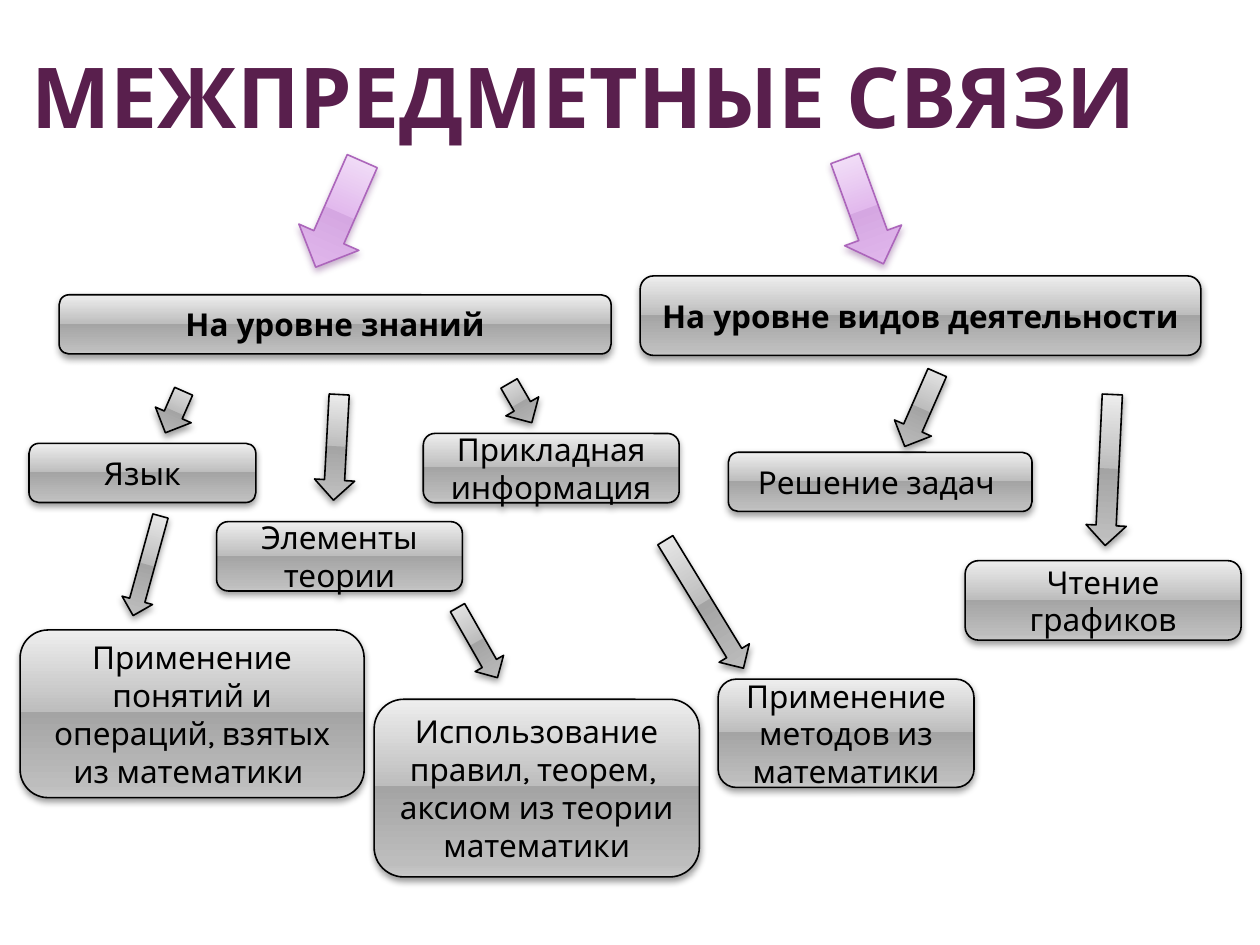
from lxml.etree import SubElement
from pptx import Presentation
from pptx.dml.color import RGBColor
from pptx.enum.shapes import MSO_SHAPE
from pptx.enum.text import MSO_ANCHOR, PP_ALIGN
from pptx.oxml.ns import qn
from pptx.util import Pt

FONT = "Karla"
GRAY = dict(stops=["EEEEEE", "BDBDBD", "A4A4A4", "BDBDBD", "C8C8C8"], line="000000", shadow="000000")
LILAC = dict(stops=["F7EBFB", "E2B9ED", "D5A7E2", "E2B9ED", "E6C6EF"], line="AC66BB", shadow="6E307B")
STOP_POSITIONS = [0, 49, 49, 92, 100]

LEVELS = [
    (365.8, 157.7, 320.4, 45.4, ["На уровне видов деятельности"]),
    (33.8, 168.5, 315.4, 33.8, ["На уровне знаний"]),
]
TOPICS = [
    (16.6, 253.4, 129.6, 33.8, ["Язык"]),
    (123.8, 298.1, 140.4, 39.6, ["Элементы теории"]),
    (241.9, 247.7, 146.2, 39.6, ["Прикладная информация"]),
    (11.5, 360, 196.6, 95.8, ["Применение понятий и операций, взятых из математики "]),
    (213.8, 399.6, 185.8, 101.5, ["Использование правил, теорем, ", "аксиом из теории математики"]),
    (410.4, 388.1, 146.2, 61.9, ["Применение методов из математики"]),
    (416.2, 258.5, 173.5, 33.8, ["Решение задач "]),
    (551.5, 320.4, 157.7, 45.4, ["Чтение графиков"]),
]
LEVEL_ARROWS = [
    (175, 89.3, 37.4, 66.2, 23.7),
    (476.6, 88.6, 34.6, 64.1, 340),
]
TOPIC_ARROWS = [
    (74.9, 293.8, 18, 59, 15.4),
    (392.4, 302.4, 20.2, 85.7, 328.6),
    (180.7, 225.4, 23, 60.5, 3.1),
    (88.6, 222.5, 22.3, 25.9, 23.7),
    (286.6, 217.4, 21.6, 25.9, 329.9),
    (263.5, 344.2, 18.7, 46.1, 330.3),
    (514.8, 211, 23, 46.1, 23.7),
    (622.1, 225.4, 23, 86.4, 2.7),
]


def rgb(value):
    """Return the colour for a hex string."""
    return RGBColor.from_string(value)


def add_color(parent, value):
    """Add a colour element to an XML parent and return it."""
    return SubElement(parent, qn("a:srgbClr"), val=value)


def style_shape(sp, theme):
    """Give a shape the glossy gradient, outline and soft shadow of a theme."""
    sp.fill.gradient()
    sp.fill.gradient_angle = 270
    stop_list = sp._element.spPr.find(".//" + qn("a:gsLst"))
    for stop in list(stop_list):
        stop_list.remove(stop)
    for position, color in zip(STOP_POSITIONS, theme["stops"]):
        add_color(SubElement(stop_list, qn("a:gs"), pos=str(position * 1000)), color)
    sp.line.color.rgb = rgb(theme["line"])
    sp.line.width = Pt(0.9)
    sp.shadow.inherit = False
    effects = sp._element.spPr.find(qn("a:effectLst"))
    shadow = SubElement(effects, qn("a:outerShdw"), blurRad=str(Pt(4)), dist=str(Pt(2)),
                        dir="5400000", rotWithShape="0")
    SubElement(add_color(shadow, theme["shadow"]), qn("a:alpha"), val="38000")


def add_run(p, text, size, color, bold):
    """Add a centred, formatted run to a paragraph and return it."""
    p.alignment = PP_ALIGN.CENTER
    r = p.add_run()
    r.text = text
    r.font.name = FONT
    r.font.size = Pt(size)
    r.font.bold = bold
    r.font.color.rgb = rgb(color)
    return r


def add_title(s, text):
    """Add the slide heading with a hairline text outline."""
    tf = s.shapes.add_textbox(Pt(11.5), Pt(0), Pt(644.5), Pt(82.8)).text_frame
    tf.word_wrap = True
    tf.vertical_anchor = MSO_ANCHOR.BOTTOM
    tf.margin_left = tf.margin_right = Pt(3.6)
    tf.margin_top = tf.margin_bottom = 0
    r = add_run(tf.paragraphs[0], text, 48, "591F4D", True)
    props = r.font._element
    outline = SubElement(props, qn("a:ln"), w=str(Pt(0.04)))
    add_color(SubElement(outline, qn("a:solidFill")), "5E1A50")
    props.insert(0, outline)


def add_box(s, x, y, w, h, lines, bold=False):
    """Add a rounded box with one paragraph per line."""
    sp = s.shapes.add_shape(MSO_SHAPE.ROUNDED_RECTANGLE, Pt(x), Pt(y), Pt(w), Pt(h))
    style_shape(sp, GRAY)
    tf = sp.text_frame
    tf.word_wrap = True
    tf.vertical_anchor = MSO_ANCHOR.MIDDLE
    for i, line in enumerate(lines):
        p = tf.add_paragraph() if i else tf.paragraphs[0]
        add_run(p, line, 18, "000000", bold)


def add_arrow(s, x, y, w, h, rotation, theme):
    """Add a rotated block arrow."""
    sp = s.shapes.add_shape(MSO_SHAPE.DOWN_ARROW, Pt(x), Pt(y), Pt(w), Pt(h))
    sp.rotation = rotation
    style_shape(sp, theme)


def main():
    """Build the slide and save it."""
    prs = Presentation()
    prs.slide_width, prs.slide_height = Pt(720), Pt(540)
    s = prs.slides.add_slide(prs.slide_layouts[6])
    add_title(s, "МЕЖПРЕДМЕТНЫЕ СВЯЗИ")
    for arrow in LEVEL_ARROWS:
        add_arrow(s, *arrow, LILAC)
    for box in LEVELS:
        add_box(s, *box, bold=True)
    for box in TOPICS:
        add_box(s, *box)
    for arrow in TOPIC_ARROWS:
        add_arrow(s, *arrow, GRAY)
    prs.save("out.pptx")


if __name__ == "__main__":
    main()
